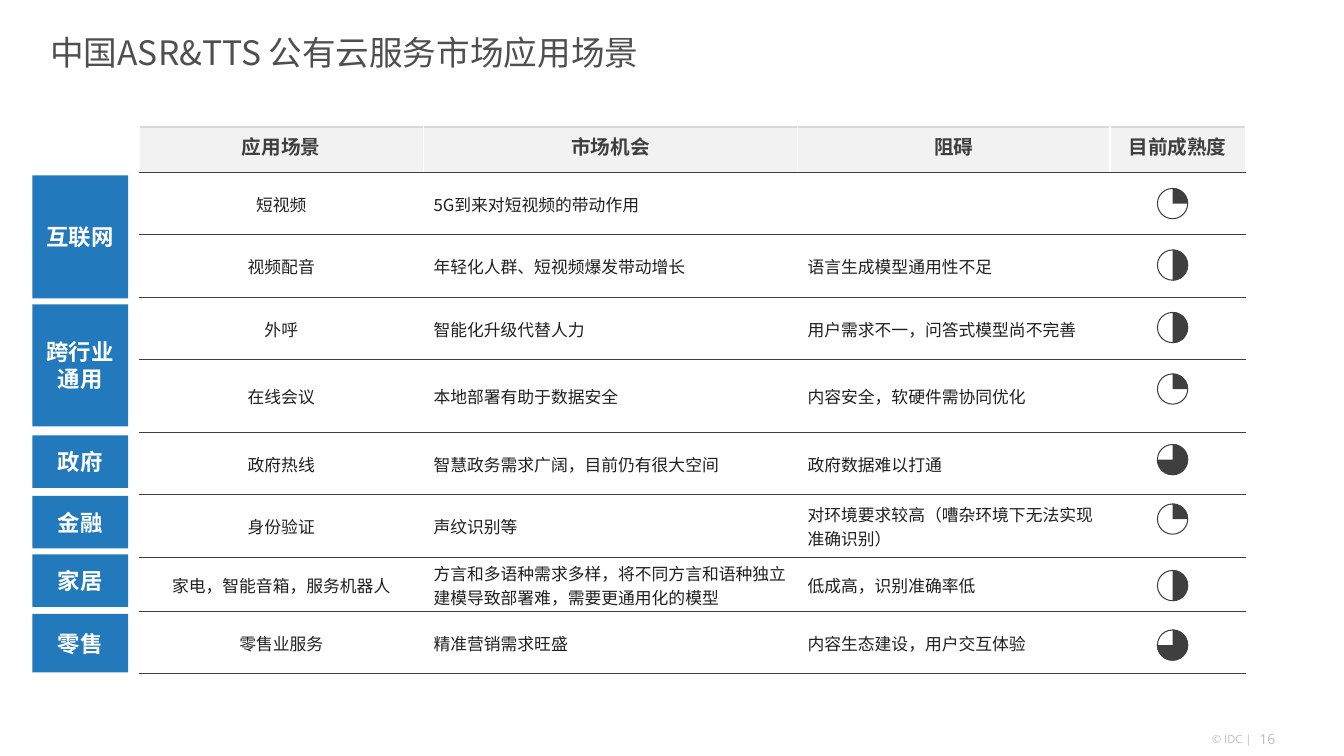
from lxml.etree import SubElement
from pptx import Presentation
from pptx.dml.color import RGBColor
from pptx.enum.shapes import MSO_SHAPE
from pptx.enum.text import MSO_ANCHOR, PP_ALIGN
from pptx.oxml.ns import qn
from pptx.util import Inches, Pt

theme = {
    "blue": "2279BC", "white": "FFFFFF", "ink": "3F3F3F", "text": "202020",
    "head": "F2F2F2", "rule": "D9D9D9", "title": "4F4F4F", "foot": "BFBFBF",
    "cjk": "Noto Sans CJK SC", "latin": "Open Sans",
    "big": 24, "tab": 16, "label": 14, "body": 12, "page": 10, "small": 8,
}

deck = Presentation()
deck.slide_width, deck.slide_height = Inches(13.33), Inches(7.5)
slide = deck.slides.add_slide(deck.slide_layouts[6])
shapes = slide.shapes
col, row = deck.slide_width // 1333, deck.slide_height // 750


def write(frame, text, size, color, bold=False, align=PP_ALIGN.LEFT, face="cjk"):
    para = frame.paragraphs[0]
    para.text = text
    para.alignment = align
    font = para.font
    font.name, font.size, font.bold = theme[face], Pt(theme[size]), bold
    font.color.rgb = RGBColor.from_string(theme[color])
    base = para._p.pPr.find(qn("a:defRPr"))
    SubElement(base, qn("a:ea"), typeface=theme[face])


def draw(kind, x, y, w, h, fill, line=None):
    shape = shapes.add_shape(kind, x * col, y * row, w * col, h * row)
    shape.shadow.inherit = False
    shape.fill.solid()
    shape.fill.fore_color.rgb = RGBColor.from_string(theme[fill])
    if line:
        shape.line.color.rgb = RGBColor.from_string(theme[line])
        shape.line.width = Pt(0.75)
    else:
        shape.line.fill.background()
    return shape


labels = [
    ("中国ASR&TTS 公有云服务市场应用场景", 50, 0, 1183, 103, "big", "title", "cjk", True),
    ("16", 1249, 725, 41, 17, "page", "foot", "latin", False),
    ("© IDC |", 1202, 727, 56, 13, "small", "foot", "latin", False),
]
for text, x, y, w, h, size, color, face, wrap in labels:
    box = shapes.add_textbox(x * col, y * row, w * col, h * row)
    frame = box.text_frame
    frame.margin_left = frame.margin_right = frame.margin_top = frame.margin_bottom = 0
    frame.word_wrap = wrap
    frame.vertical_anchor = MSO_ANCHOR.MIDDLE if wrap else MSO_ANCHOR.TOP
    write(frame, text, size, color, face=face)

rows = [
    ("应用场景", "市场机会", "阻碍", "目前成熟度"),
    ("短视频", "5G到来对短视频的带动作用", "", ""),
    ("视频配音", "年轻化人群、短视频爆发带动增长", "语言生成模型通用性不足", ""),
    ("外呼", "智能化升级代替人力", "用户需求不一，问答式模型尚不完善", ""),
    ("在线会议", "本地部署有助于数据安全", "内容安全，软硬件需协同优化", ""),
    ("政府热线", "智慧政务需求广阔，目前仍有很大空间", "政府数据难以打通", ""),
    ("身份验证", "声纹识别等", "对环境要求较高（嘈杂环境下无法实现准确识别）", ""),
    ("家电，智能音箱，服务机器人",
     "方言和多语种需求多样，将不同方言和语种独立建模导致部署难，需要更通用化的模型",
     "低成高，识别准确率低", ""),
    ("零售业服务", "精准营销需求旺盛", "内容生态建设，用户交互体验", ""),
]
widths = [282, 371, 310, 134]
heights = [45, 62, 62, 62, 72, 62, 62, 54, 61]
table = shapes.add_table(len(rows), len(widths), 138 * col, 126 * row,
                         sum(widths) * col, sum(heights) * row).table
for i, width in enumerate(widths):
    table.columns[i].width = width * col
for r, texts in enumerate(rows):
    table.rows[r].height = heights[r] * row
    top = r == 0
    for c, text in enumerate(texts):
        cell = table.cell(r, c)
        edges = {"L": "white", "R": "white", "T": "rule" if top else "ink", "B": "ink"}
        for side, color in edges.items():
            line = SubElement(cell._tc.get_or_add_tcPr(), qn("a:ln" + side), w=str(Pt(1)))
            fill = SubElement(line, qn("a:solidFill"))
            SubElement(fill, qn("a:srgbClr"), val=theme[color])
        cell.fill.solid()
        cell.fill.fore_color.rgb = RGBColor.from_string(theme["head" if top else "white"])
        if not top:
            cell.vertical_anchor = MSO_ANCHOR.MIDDLE
            cell.margin_top, cell.margin_bottom = row, 0
        align = PP_ALIGN.CENTER if top or c == 0 else PP_ALIGN.LEFT
        write(cell.text_frame, text, "label" if top else "body",
              "ink" if top else "text", top, align)

groups = [("互联网", 174, 122), ("跨行业通用", 302, 121), ("政府", 432, 52),
          ("金融", 492, 52), ("家居", 550, 52), ("零售", 609, 58)]
for text, y, h in groups:
    tab = draw(MSO_SHAPE.RECTANGLE, 32, y, 95, h, "blue")
    tab.text_frame.word_wrap = True
    tab.text_frame.vertical_anchor = MSO_ANCHOR.MIDDLE
    write(tab.text_frame, text, "tab", "white", True, PP_ALIGN.CENTER)

dials = [(187, 1), (248, 2), (310, 2), (371, 1), (441, 3), (500, 1), (566, 2), (625, 3)]
for y, parts in dials:
    draw(MSO_SHAPE.OVAL, 1148, y, 30, 30, "white", "ink")
    arc = draw(MSO_SHAPE.ARC, 1148, y, 30, 30, "ink", "ink")
    arc.adjustments[0] = 162
    arc.adjustments[1] = 54 * (parts - 1)

deck.save("out.pptx")
